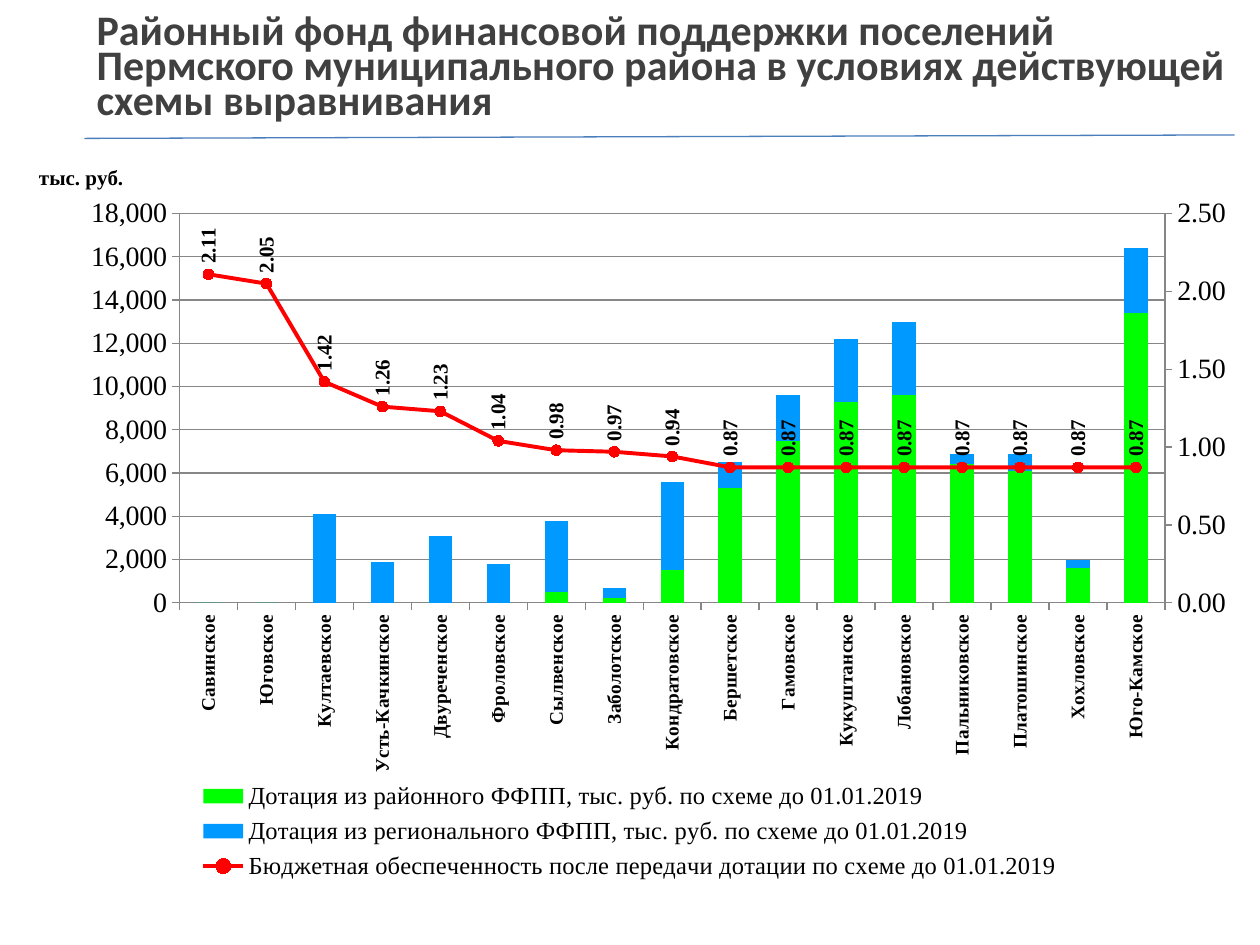
from copy import deepcopy
from dataclasses import dataclass

from pptx import Presentation
from pptx.chart.axis import ValueAxis
from pptx.chart.data import CategoryChartData as Data
from pptx.dml.color import RGBColor as Rgb
from pptx.enum.chart import XL_CHART_TYPE as Kind
from pptx.enum.chart import XL_LABEL_POSITION as Spot
from pptx.enum.chart import XL_LEGEND_POSITION as Side
from pptx.enum.chart import XL_MARKER_STYLE as Mark
from pptx.enum.chart import XL_TICK_MARK as Tick
from pptx.enum.dml import MSO_LINE as Dash
from pptx.enum.shapes import MSO_CONNECTOR as Link
from pptx.enum.text import MSO_ANCHOR as Anchor
from pptx.oxml import parse_xml
from pptx.oxml.ns import nsdecls, qn
from pptx.util import Cm, Pt


@dataclass(frozen=True)
class Theme:
    """Colours, fonts and type sizes of the slide."""
    head: str = "404040"
    rule: str = "4B7EBC"
    ink: str = "000000"
    axis: str = "868686"
    grid: str = "C6D9F1"
    local: str = "00FF00"
    region: str = "0099FF"
    level: str = "FF0000"
    edge: str = "C00000"
    sans: str = "Calibri"
    serif: str = "Times New Roman"
    title: int = 24
    base: int = 18
    scale: int = 16
    legend: int = 14
    label: int = 12
    names: int = 11


T = Theme()
TITLE = ("Районный фонд финансовой поддержки поселений Пермского "
         "муниципального района в условиях действующей схемы выравнивания")
UNIT = "тыс. руб."
TOWNS = ["Савинское", "Юговское", "Култаевское", "Усть-Качкинское",
         "Двуреченское", "Фроловское", "Сылвенское", "Заболотское",
         "Кондратовское", "Бершетское", "Гамовское", "Кукуштанское",
         "Лобановское", "Пальниковское", "Платошинское", "Хохловское",
         "Юго-Камское"]
SERIES = {
    "Дотация из районного ФФПП, тыс. руб. по схеме до 01.01.2019":
        [0] * 6 + [500, 200, 1500, 5300, 7500, 9300, 9600, 6400, 6100,
                   1600, 13400],
    "Дотация из регионального ФФПП, тыс. руб. по схеме до 01.01.2019":
        [0, 0, 4100, 1900, 3100, 1800, 3300, 500, 4100, 1200, 2100, 2900,
         3400, 500, 800, 400, 3000],
    "Бюджетная обеспеченность после передачи дотации по схеме до 01.01.2019":
        [2.11, 2.05, 1.42, 1.26, 1.23, 1.04, 0.98, 0.97, 0.94] + [0.87] * 8,
}


def tint(fill, hue):
    """Give a fill one solid colour."""
    fill.solid()
    fill.fore_color.rgb = Rgb.from_string(hue)


def stroke(line, hue, width):
    """Give a line its colour and width in points."""
    tint(line.fill, hue)
    line.width = Pt(width)


def style(font, size, bold=False, face=T.serif, hue=T.ink):
    """Set the face, size, weight and colour of a font."""
    font.name, font.size, font.bold = face, Pt(size), bold
    font.color.rgb = Rgb.from_string(hue)


def turn(node, angle):
    """Rotate the text of a chart part by whole degrees."""
    body = node.find(".//" + qn("a:bodyPr"))
    body.set("rot", str(angle * 60000))
    body.set("vert", "horz")


def drop(node, tag):
    """Remove the children of a node that have the tag."""
    for old in node.findall(qn(tag)):
        node.remove(old)


def place(node, index, inner=False, **box):
    """Fix a chart part at fractions of the chart area."""
    drop(node, "c:layout")
    rows = '<c:layoutTarget val="inner"/>' if inner else ""
    rows += "".join(f'<c:{k}Mode val="edge"/>' for k in "xy")
    rows += "".join(f'<c:{k} val="{v}"/>' for k, v in box.items())
    node.insert(index, parse_xml(
        f'<c:layout {nsdecls("c")}><c:manualLayout>{rows}'
        '</c:manualLayout></c:layout>'))


def add_title(slide):
    """Add the heading of the slide."""
    box = slide.shapes.add_textbox(Cm(1.7), Cm(0.74), Cm(23.85), Cm(1.4))
    frame = box.text_frame
    frame.word_wrap, frame.vertical_anchor = True, Anchor.MIDDLE
    para = frame.paragraphs[0]
    para.line_spacing = Pt(20)
    run = para.add_run()
    run.text = TITLE
    style(run.font, T.title, True, T.sans, T.head)


def add_rule(slide):
    """Add the thin line under the heading."""
    rule = slide.shapes.add_connector(
        Link.STRAIGHT, Cm(1.7), Cm(2.79), Cm(24.89), Cm(2.72))
    stroke(rule.line, T.rule, 0.75)
    rule._element.spPr.append(parse_xml(f'<a:effectLst {nsdecls("a")}/>'))


def set_axis(axis, size, bold=False):
    """Style the line, ticks and labels of an axis."""
    axis.major_tick_mark, axis.minor_tick_mark = Tick.OUTSIDE, Tick.NONE
    stroke(axis.format.line, T.axis, 0.75)
    style(axis.tick_labels.font, size, bold)


def set_scale(axis, top, step, form):
    """Set the range and number format of a value axis."""
    axis.minimum_scale, axis.maximum_scale, axis.major_unit = 0, top, step
    axis.tick_labels.number_format = form
    axis.tick_labels.number_format_is_linked = False


def set_left(axis):
    """Add the gridlines and the unit to the left axis."""
    axis.has_major_gridlines = True
    line = axis.major_gridlines.format.line
    stroke(line, T.grid, 0.5)
    line.dash_style = Dash.ROUND_DOT
    title = axis.axis_title
    run = title.text_frame.paragraphs[0].add_run()
    run.text = UNIT
    style(run.font, T.label, True)
    turn(title._element, 0)
    place(title._element, 1, x=0, y=0.01)


def split_line(chart):
    """Move the last series to a line plot on a right axis."""
    row = chart.plots[0].series[-1]._element
    drop(row, "c:invertIfNegative")
    plot = parse_xml(
        f'<c:lineChart {nsdecls("c")}><c:grouping val="standard"/>'
        '<c:varyColors val="0"/><c:marker val="1"/>'
        '<c:axId val="501"/><c:axId val="502"/></c:lineChart>')
    plot.insert(2, row)
    chart._chartSpace.chart.plotArea.find(qn("c:barChart")).addnext(plot)
    twins = [deepcopy(a._element)
             for a in (chart.category_axis, chart.value_axis)]
    for twin, own, other in zip(twins, ("501", "502"), ("502", "501")):
        twin.find(qn("c:axId")).set("val", own)
        twin.find(qn("c:crossAx")).set("val", other)
    chart.value_axis._element.addnext(twins[0])
    twins[0].addnext(twins[1])
    twins[0].find(qn("c:delete")).set("val", "1")
    twins[1].find(qn("c:axPos")).set("val", "r")
    twins[1].find(qn("c:crosses")).set("val", "max")
    right = ValueAxis(twins[1])
    right.has_major_gridlines = False
    set_scale(right, 2.5, 0.5, "0.00")


def set_level(row):
    """Style the line series, its markers and its labels."""
    row.smooth = False
    stroke(row.format.line, T.level, 2.25)
    row.marker.style, row.marker.size = Mark.CIRCLE, 6
    tint(row.marker.format.fill, T.level)
    stroke(row.marker.format.line, T.edge, 0.75)
    tags = row.data_labels
    tags.show_value, tags.position = True, Spot.ABOVE
    tags.number_format, tags.number_format_is_linked = "0.00", False
    style(tags.font, T.label, True)
    turn(tags._element, -90)


def add_chart(slide):
    """Add the stacked columns with the line over them."""
    data = Data()
    data.categories = TOWNS
    for name, vals in SERIES.items():
        data.add_series(name, vals)
    chart = slide.shapes.add_chart(
        Kind.COLUMN_STACKED, Cm(0.71), Cm(3.1), Cm(24.23), Cm(15.09),
        data).chart
    chart.has_title = False
    style(chart.font, T.base)
    set_axis(chart.category_axis, T.names, True)
    turn(chart.category_axis._element, -90)
    set_axis(chart.value_axis, T.scale)
    set_scale(chart.value_axis, 18000, 2000, "#,##0")
    split_line(chart)
    set_left(chart.value_axis)
    bars, lines = chart.plots
    bars.gap_width, bars.overlap, bars.vary_by_categories = 150, 100, False
    for row, hue in zip(bars.series, (T.local, T.region)):
        tint(row.format.fill, hue)
    set_level(lines.series[0])
    chart.has_legend = True
    legend = chart.legend
    legend.position, legend.include_in_layout = Side.BOTTOM, False
    style(legend.font, T.legend)
    place(legend._element, 1, x=0.12, y=0.83, w=0.75, h=0.15)
    place(chart._chartSpace.chart.plotArea, 0, True,
          x=0.12, y=0.08, w=0.82, h=0.52)


def main():
    """Build the slide and save it."""
    deck = Presentation()
    deck.slide_width, deck.slide_height = Cm(25.4), Cm(19.05)
    slide = deck.slides.add_slide(deck.slide_layouts[6])
    for add in (add_title, add_rule, add_chart):
        add(slide)
    deck.save("out.pptx")


if __name__ == "__main__":
    main()
